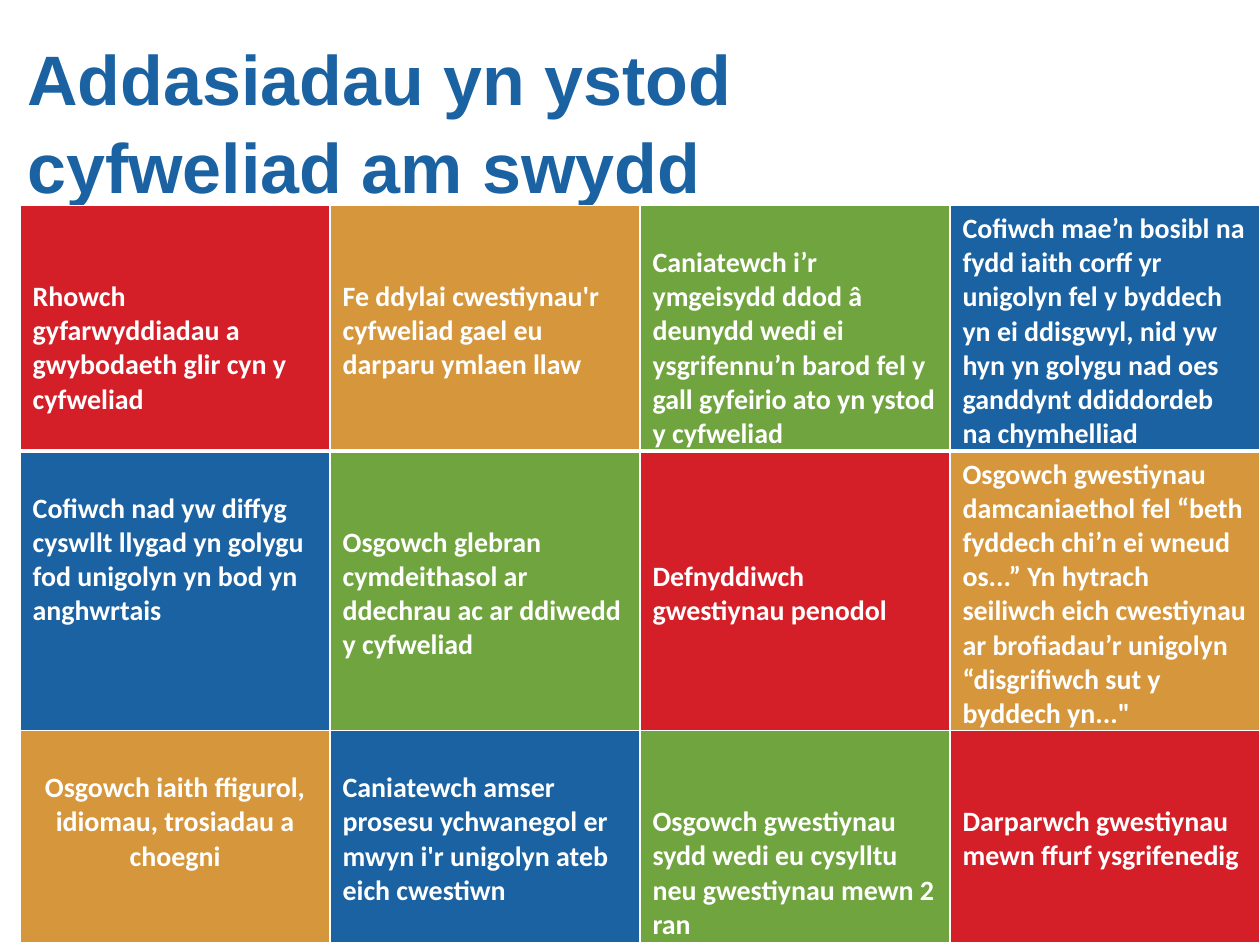
from pptx import Presentation
from pptx import util as u
from pptx.dml.color import RGBColor
from pptx.enum import text as t
from pptx.oxml import parse_xml
from pptx.oxml.ns import nsdecls

"""Build a slide of job interview adjustments in a coloured grid."""

THEME = {
    "red": "D41F29", "gold": "D5963C", "green": "70A43E", "blue": "1A62A2",
    "white": "FFFFFF", "head": "Arial", "body": "Calibri", "big": 40, "small": 16,
}
TITLE = "Addasiadau yn ystod cyfweliad am swydd"
LEFT, MID = t.PP_ALIGN.LEFT, t.PP_ALIGN.CENTER

# Each cell: fill, lines of drop, alignment, wording
GRID = [
    [
        ("red", 2, LEFT, "Rhowch gyfarwyddiadau a gwybodaeth glir cyn y cyfweliad"),
        ("gold", 2, LEFT, "Fe ddylai cwestiynau'r cyfweliad gael eu darparu ymlaen llaw"),
        ("green", 1, LEFT, "Caniatewch i’r ymgeisydd ddod â deunydd wedi ei ysgrifennu’n "
         "barod fel y gall gyfeirio ato yn ystod y cyfweliad"),
        ("blue", 0, LEFT, "Cofiwch mae’n bosibl na fydd iaith corff yr unigolyn fel y byddech "
         "yn ei ddisgwyl, nid yw hyn yn golygu nad oes ganddynt ddiddordeb na chymhelliad"),
    ],
    [
        ("blue", 1, LEFT, "Cofiwch nad yw diffyg cyswllt llygad yn golygu fod unigolyn "
         "yn bod yn anghwrtais"),
        ("green", 2, LEFT, "Osgowch glebran cymdeithasol ar ddechrau ac ar ddiwedd y cyfweliad"),
        ("red", 3, LEFT, "Defnyddiwch gwestiynau penodol"),
        ("gold", 0, LEFT, "Osgowch gwestiynau damcaniaethol fel “beth fyddech chi’n ei wneud "
         "os...” Yn hytrach seiliwch eich cwestiynau ar brofiadau’r unigolyn “disgrifiwch "
         "sut y byddech yn...\""),
    ],
    [
        ("gold", 1, MID, "Osgowch iaith ffigurol, idiomau, trosiadau a choegni"),
        ("blue", 1, LEFT, "Caniatewch amser prosesu ychwanegol er mwyn i'r unigolyn ateb "
         "eich cwestiwn"),
        ("green", 2, LEFT, "Osgowch gwestiynau sydd wedi eu cysylltu neu gwestiynau mewn 2 ran"),
        ("red", 2, LEFT, "Darparwch gwestiynau mewn ffurf ysgrifenedig"),
    ],
]
ROWS = [1.95, 2.22, 1.68]
WIDE, LINE, PAD = 2.46, 0.27, 0.05


def tint(name):
    return RGBColor.from_string(THEME[name])


def write(frame, words, font="body", size="small", color="white", align=LEFT, space=None):
    frame.word_wrap = True
    para = frame.paragraphs[0]
    para.alignment = align
    para.line_spacing = space
    run = para.add_run()
    run.text = words
    run.font.name = THEME[font]
    run.font.size = u.Pt(THEME[size])
    run.font.bold = True
    run.font.color.rgb = tint(color)


def edge(cell, side, points):
    cell._tc.get_or_add_tcPr().append(parse_xml(
        f'<a:ln{side} {nsdecls("a")} w="{u.Pt(points)}"><a:solidFill>'
        f'<a:srgbClr val="{THEME["white"]}"/></a:solidFill></a:ln{side}>'))


def title(slide):
    box = slide.shapes.add_textbox(*map(u.Inches, (0.12, 0.21, 7.48, 1.45)))
    write(box.text_frame, TITLE, font="head", size="big", color="blue", space=1.04)
    box.text_frame.auto_size = t.MSO_AUTO_SIZE.SHAPE_TO_FIT_TEXT


def grid(slide):
    cols = len(GRID[0])
    place = map(u.Inches, (0.16, 1.63, WIDE * cols, sum(ROWS)))
    table = slide.shapes.add_table(len(GRID), cols, *place).table
    table.first_row = table.horz_banding = False
    for col in table.columns:
        col.width = u.Inches(WIDE)
    for r, cells in enumerate(GRID):
        table.rows[r].height = u.Inches(ROWS[r])
        for c, (fill, drop, align, words) in enumerate(cells):
            cell = table.cell(r, c)
            cell.margin_top = u.Inches(PAD + drop * LINE)
            cell.margin_bottom = 0
            for side, thick in (("L", 1), ("R", 1), ("T", 3 if r == 1 else 1),
                                ("B", 3 if r == 0 else 1)):
                edge(cell, side, thick)
            cell.fill.solid()
            cell.fill.fore_color.rgb = tint(fill)
            write(cell.text_frame, words, align=align)


def main():
    deck = Presentation()
    deck.slide_width, deck.slide_height = u.Inches(10), u.Inches(7.5)
    slide = deck.slides.add_slide(deck.slide_layouts[6])
    title(slide)
    grid(slide)
    deck.save("out.pptx")


if __name__ == "__main__":
    main()
